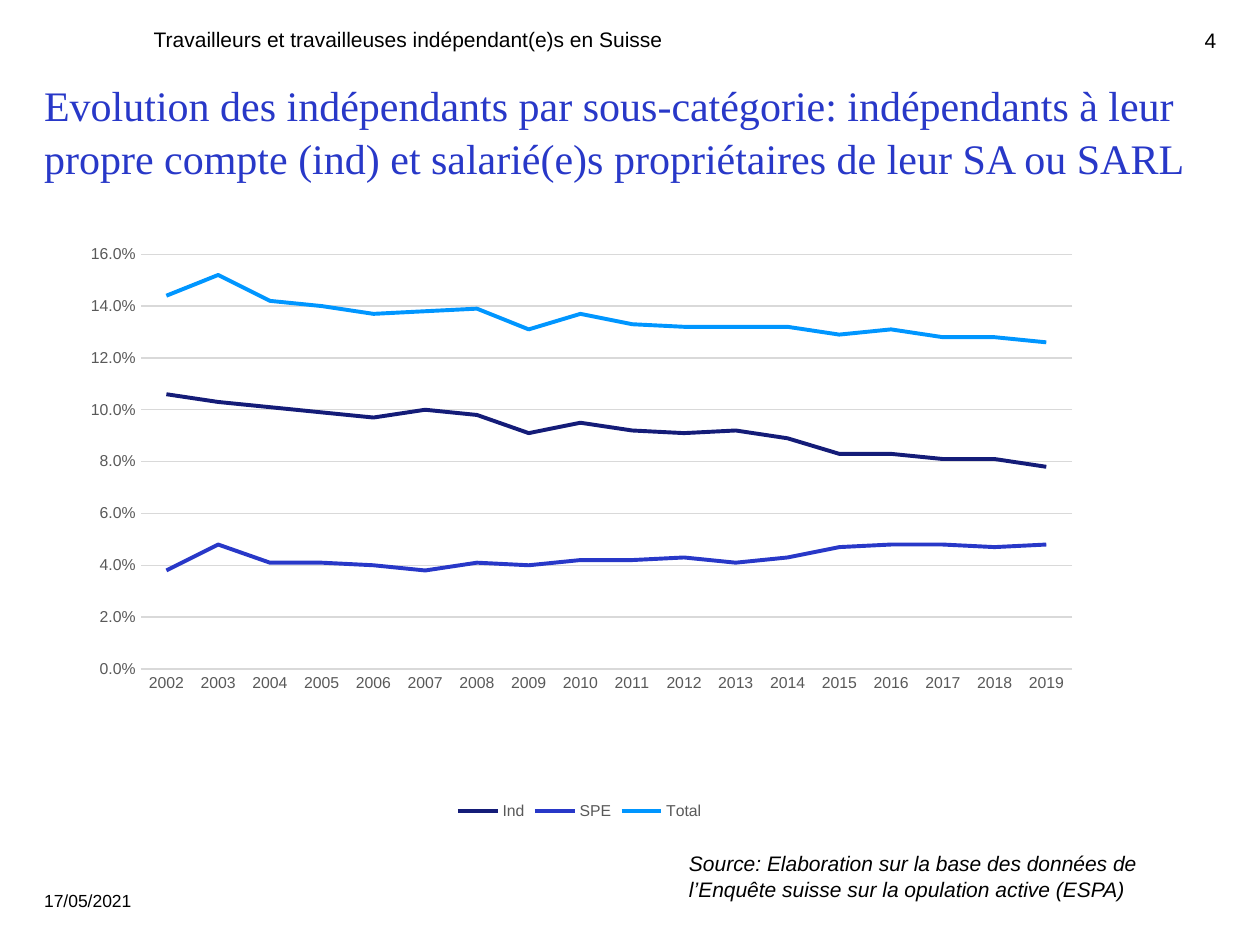
"""Build the slide on self-employment trends in Switzerland."""
from dataclasses import dataclass

from lxml import etree
from pptx import Presentation
from pptx import util as u
from pptx.chart import data as chart_data
from pptx.dml import color
from pptx.enum import chart as charts, text


@dataclass(frozen=True)
class Theme:
    """Colours, fonts and type sizes of the slide."""
    ink: str = "000000"
    heading: str = "2838C8"
    axis: str = "595959"
    grid: str = "D9D9D9"
    lines: tuple = ("141C78", "2838C8", "0096FF")
    body_font: str = "Arial"
    title_font: str = "Times New Roman"
    title: int = 24
    body: int = 12
    date: int = 10
    label: int = 9


THEME = Theme()
YEARS = [str(year) for year in range(2002, 2020)]
SHARES = {
    "Ind": (10.6, 10.3, 10.1, 9.9, 9.7, 10, 9.8, 9.1, 9.5,
            9.2, 9.1, 9.2, 8.9, 8.3, 8.3, 8.1, 8.1, 7.8),
    "SPE": (3.8, 4.8, 4.1, 4.1, 4, 3.8, 4.1, 4, 4.2,
            4.2, 4.3, 4.1, 4.3, 4.7, 4.8, 4.8, 4.7, 4.8),
    "Total": (14.4, 15.2, 14.2, 14, 13.7, 13.8, 13.9, 13.1, 13.7,
              13.3, 13.2, 13.2, 13.2, 12.9, 13.1, 12.8, 12.8, 12.6),
}
PLOT_AREA = {"x": 0.09, "y": 0.05, "w": 0.87, "h": 0.69}


def rgb(value):
    """Return a colour object for a hex string."""
    return color.RGBColor.from_string(value)


def style_font(font, size, ink, name=THEME.body_font, italic=False):
    """Set the face, size, colour and slant of a font."""
    font.name, font.size, font.italic = name, u.Pt(size), italic
    font.color.rgb = rgb(ink)


def add_text(slide, words, box, size=THEME.body, ink=THEME.ink,
             name=THEME.body_font, italic=False, align=text.PP_ALIGN.LEFT):
    """Add a wrapped text box without margins."""
    frame = slide.shapes.add_textbox(*map(u.Cm, box)).text_frame
    frame.word_wrap = True
    frame.margin_left = frame.margin_right = 0
    frame.margin_top = frame.margin_bottom = 0
    paragraph = frame.paragraphs[0]
    paragraph.alignment = align
    paragraph.line_spacing = 1.05
    run = paragraph.add_run()
    run.text = words
    style_font(run.font, size, ink, name, italic)


def style_line(line, ink, width):
    """Set the colour and width of a line."""
    line.color.rgb = rgb(ink)
    line.width = u.Pt(width)


def fix_plot_area(chart, fractions):
    """Place the inner plot area by fractions of the chart frame."""
    plot_area = chart.plots[0]._element.getparent()
    namespace = etree.QName(plot_area).namespace
    for old in plot_area.findall(f"{{{namespace}}}layout"):
        plot_area.remove(old)
    layout = etree.Element(f"{{{namespace}}}layout")
    manual = etree.SubElement(layout, f"{{{namespace}}}manualLayout")
    settings = {"layoutTarget": "inner", "xMode": "edge", "yMode": "edge", **fractions}
    for tag, value in settings.items():
        etree.SubElement(manual, f"{{{namespace}}}{tag}").set("val", str(value))
    plot_area.insert(0, layout)


def style_axes(chart):
    """Format the year axis, the share axis and the grid."""
    years, shares = chart.category_axis, chart.value_axis
    for axis in (years, shares):
        axis.major_tick_mark = axis.minor_tick_mark = charts.XL_TICK_MARK.NONE
        style_font(axis.tick_labels.font, THEME.label, THEME.axis)
    style_line(years.format.line, THEME.grid, 0.75)
    shares.format.line.fill.background()
    shares.minimum_scale, shares.maximum_scale, shares.major_unit = 0, 0.16, 0.02
    shares.tick_labels.number_format = "0.0%"
    shares.tick_labels.number_format_is_linked = False
    shares.has_major_gridlines = True
    style_line(shares.major_gridlines.format.line, THEME.grid, 0.75)


def add_share_chart(slide, box):
    """Add the line chart of shares by category."""
    figures = chart_data.CategoryChartData(number_format="0.0%")
    figures.categories = YEARS
    for category, percents in SHARES.items():
        figures.add_series(category, [round(p / 100, 3) for p in percents])
    chart = slide.shapes.add_chart(
        charts.XL_CHART_TYPE.LINE, *map(u.Cm, box), figures).chart
    style_font(chart.font, THEME.date, THEME.ink)
    chart.has_title = False
    chart.has_legend = True
    chart.legend.position = charts.XL_LEGEND_POSITION.BOTTOM
    chart.legend.include_in_layout = False
    style_font(chart.legend.font, THEME.label, THEME.axis)
    chart.plots[0].vary_by_categories = False
    for series, ink in zip(chart.plots[0].series, THEME.lines):
        series.smooth = False
        series.marker.style = charts.XL_MARKER_STYLE.NONE
        style_line(series.format.line, ink, 2.25)
    style_axes(chart)
    fix_plot_area(chart, PLOT_AREA)


def main():
    """Build and save the presentation."""
    deck = Presentation()
    deck.slide_width, deck.slide_height = u.Cm(25.4), u.Cm(19.05)
    slide = deck.slides.add_slide(deck.slide_layouts[6])
    add_text(slide, "Travailleurs et travailleuses indépendant(e)s en Suisse",
             (3.1, 0.51, 18.9, 1.32))
    add_text(slide, "Evolution des indépendants par sous-catégorie: indépendants à leur "
             "propre compte (ind) et salarié(e)s propriétaires de leur SA ou SARL",
             (0.89, 1.55, 23.6, 2), size=THEME.title, ink=THEME.heading,
             name=THEME.title_font)
    add_text(slide, "17/05/2021", (0.89, 17.93, 5.92, 1.12), size=THEME.date)
    add_text(slide, "4", (22.23, 0.53, 2.29, 1.32), align=text.PP_ALIGN.RIGHT)
    add_share_chart(slide, (0.89, 4.52, 21.59, 12.12))
    add_text(slide, "Source: Elaboration sur la base des données de l’Enquête suisse "
             "sur la opulation active (ESPA)", (13.89, 17.12, 10.21, 1.07), italic=True)
    deck.save("out.pptx")


if __name__ == "__main__":
    main()
